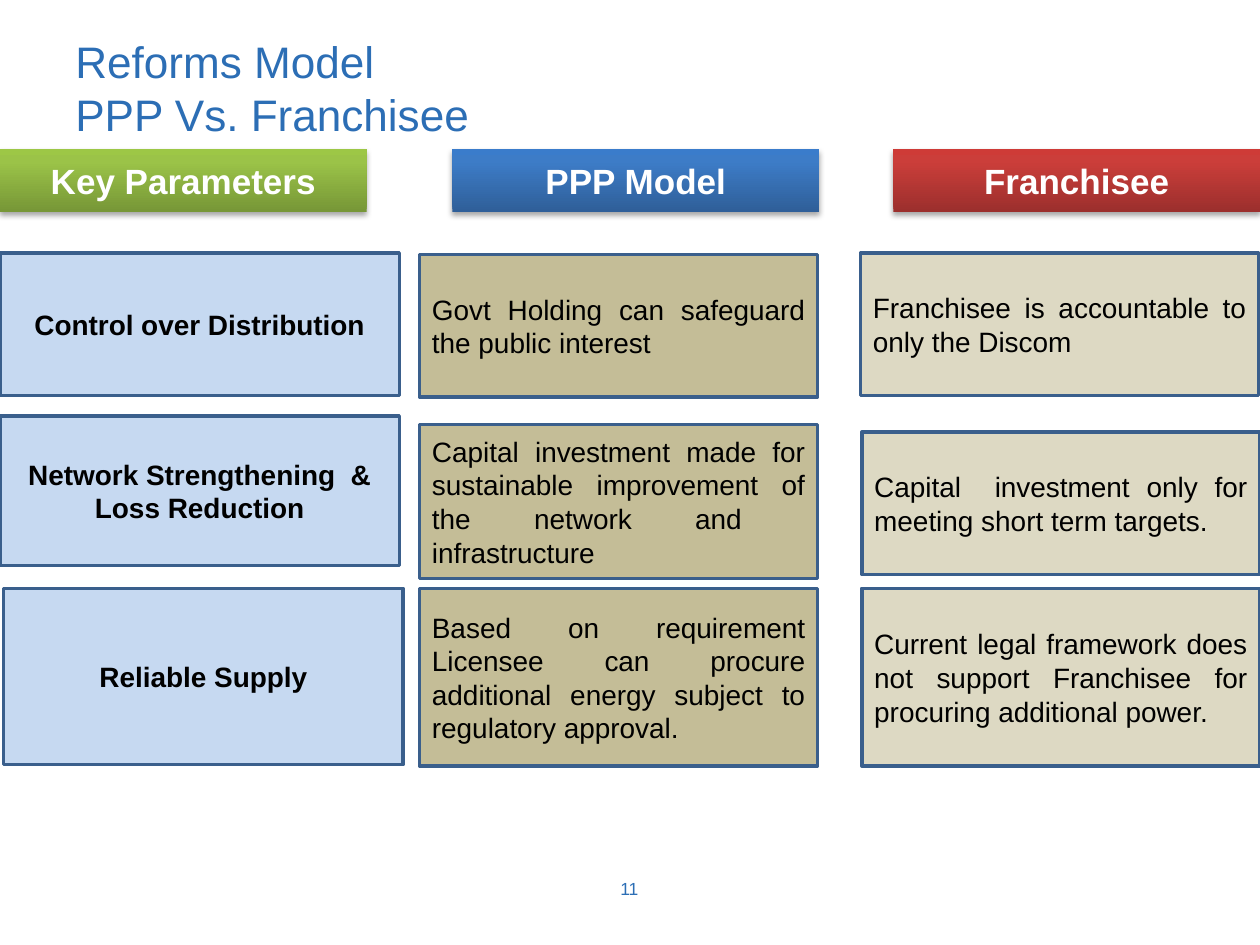
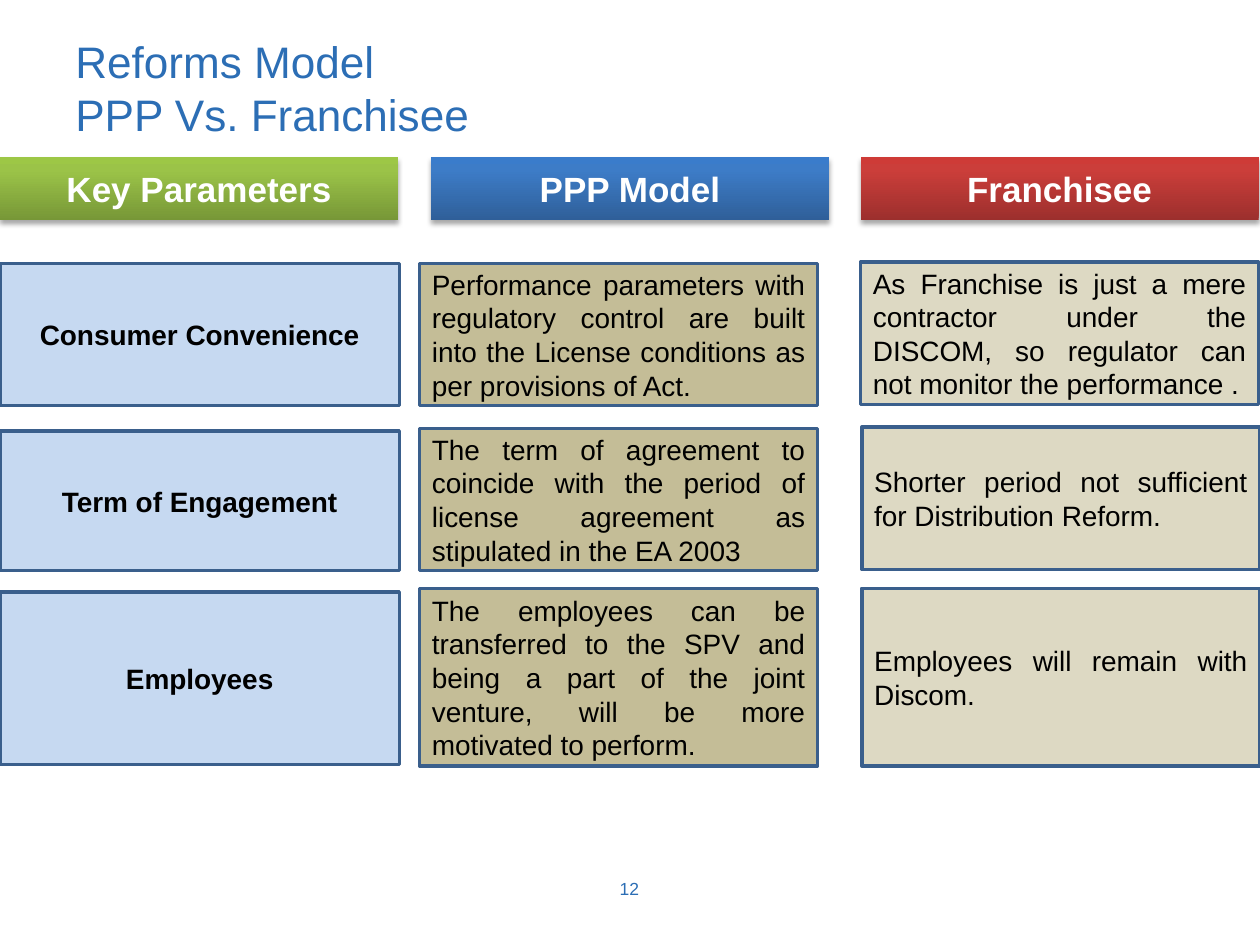
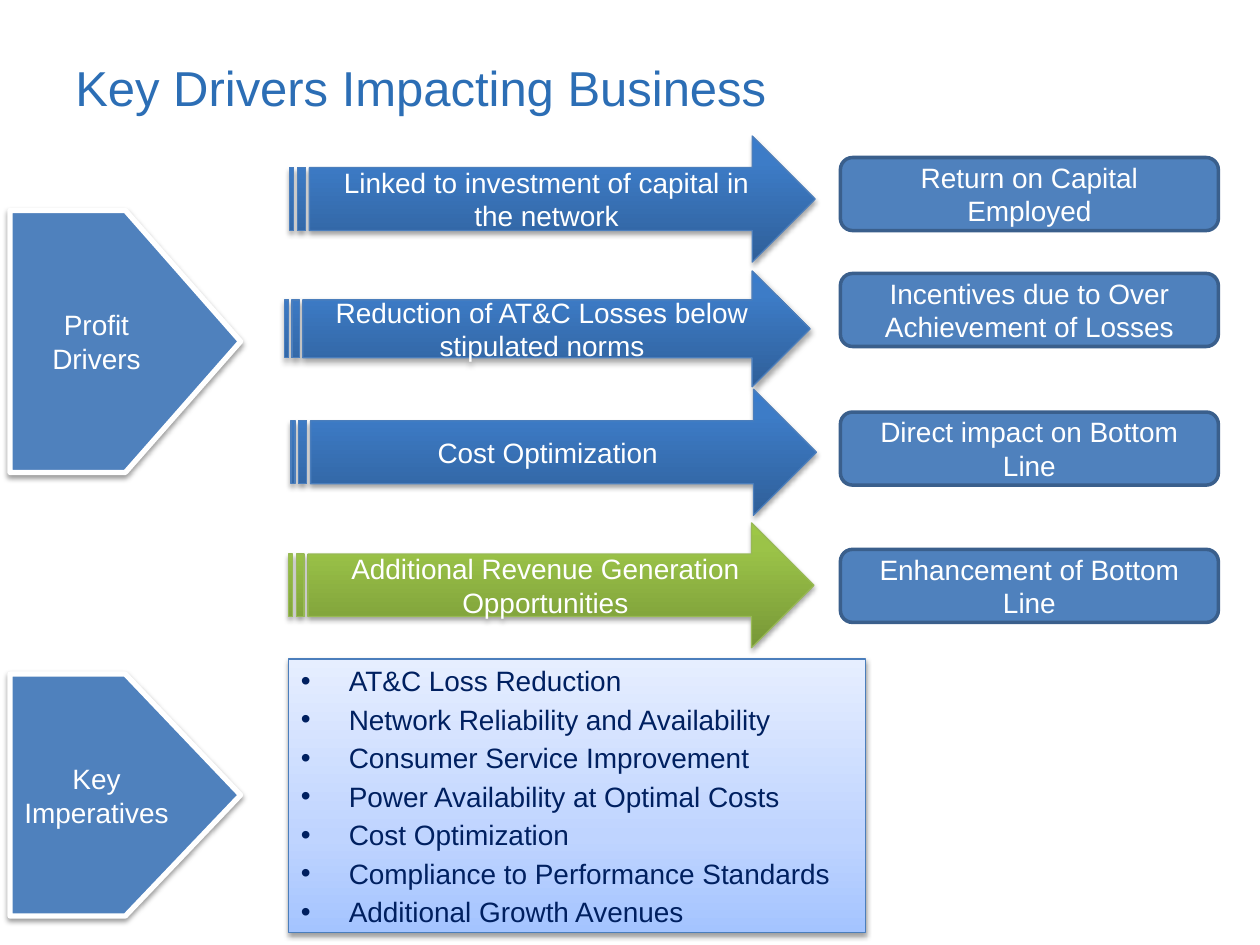
from lxml import etree
from pptx import Presentation
from pptx.dml.color import RGBColor
from pptx.enum.shapes import MSO_SHAPE
from pptx.enum.text import MSO_ANCHOR, PP_ALIGN
from pptx.oxml.ns import qn
from pptx.util import Pt

RECT = MSO_SHAPE.RECTANGLE
PLATE = MSO_SHAPE.PENTAGON
ARROW = MSO_SHAPE.STRIPED_RIGHT_ARROW
ROUND = MSO_SHAPE.FLOWCHART_ALTERNATE_PROCESS
LEFT, CENTER, JUST = PP_ALIGN.LEFT, PP_ALIGN.CENTER, PP_ALIGN.JUSTIFY
TOP, MIDDLE = MSO_ANCHOR.TOP, MSO_ANCHOR.MIDDLE

SCALE = 9144  # EMU per px, 100 px to the inch
FONT = "Arial"
HEX = {
    "title": "2C6EB5", "white": "FFFFFF", "black": "000000", "navy": "002060",
    "edge": "3A5F8C", "steel": "4F81BD", "sky": "C6D9F1", "tan": "C4BD97",
    "sand": "DDD9C3", "blue_edge": "4B7EBC", "green_edge": "98B955",
}
GRADS = {
    "blue": [(0, "2F5F99"), (80, "3D7CC7"), (100, "3A7CCB")],
    "red": [(0, "9C2F2D"), (80, "CB3E3A"), (100, "CE3B37")],
    "green": [(0, "779737"), (80, "9BC348"), (100, "9DC746")],
    "pale": [(0, "A4C4FF"), (35, "BFD4FF"), (100, "E6EEFF")],
}
HEADS = [("Key Parameters", "green"), ("PPP Model", "blue"), ("Franchisee", "red")]
COLS = [  # width, fill, alignment, bold
    (317, "sky", CENTER, True),
    (316, "tan", JUST, False),
    (316, "sand", JUST, False),
]


def px(*vals):
    return [round(v * SCALE) for v in vals]


def rgb(name):
    return RGBColor.from_string(HEX[name])


def add(parent, tag, **attrs):
    return etree.SubElement(parent, qn(tag), {k: str(v) for k, v in attrs.items()})


def write(para, text, size, color, align=CENTER, bold=False):
    para.text = text
    para.alignment = align
    look = {"name": FONT, "size": Pt(size), "bold": bold}
    for run in para.runs:
        for key, val in look.items():
            setattr(run.font, key, val)
        run.font.color.rgb = rgb(color)


def frame(shape, anchor=MIDDLE):
    body = shape.text_frame
    body.word_wrap = True
    body.vertical_anchor = anchor
    return body


def label(slide, box, text, size, align):
    shape = slide.shapes.add_textbox(*px(*box))
    write(frame(shape).paragraphs[0], text, size, "title", align)


def blend(shape, stops):
    """Fill the shape with a gradient that runs from bottom to top."""
    shape.fill.gradient()
    grad = shape.element.spPr.find(qn("a:gradFill"))
    grad.find(qn("a:lin")).set("ang", "16200000")
    items = grad.find(qn("a:gsLst"))
    items.clear()
    for pos, color in stops:
        add(add(items, "a:gs", pos=pos * 1000), "a:srgbClr", val=color)


def shade(shape, alpha, dist):
    """Cast a soft shadow straight down."""
    holder = shape.element.spPr.find(qn("a:effectLst"))
    cast = add(holder, "a:outerShdw", blurRad=Pt(3.1), dist=Pt(dist),
               dir=5400000, rotWithShape=0)
    color = add(cast, "a:srgbClr", val=HEX["black"])
    add(color, "a:alpha", val=alpha * 1000)


def block(slide, kind, box, fill, line=None, shadow=None):
    shape = slide.shapes.add_shape(kind, *px(*box))
    if fill in GRADS:
        blend(shape, GRADS[fill])
    else:
        shape.fill.solid()
        shape.fill.fore_color.rgb = rgb(fill)
    if line:
        shape.line.color.rgb = rgb(line[0])
        shape.line.width = Pt(line[1])
    else:
        shape.line.fill.background()
    shape.shadow.inherit = False
    if shadow:
        shade(shape, *shadow)
    return shape


def say(shape, text, size=16, color="white", align=CENTER, bold=False):
    write(frame(shape).paragraphs[0], text, size, color, align, bold)


def start(deck, title, size, page=None):
    """Add a slide with its title and, if given, its page number."""
    slide = deck.slides.add_slide(deck.slide_layouts[6])
    label(slide, (50, 30, 900, 78), title, size, LEFT)
    if page:
        label(slide, (383, 685, 233, 40), page, 10, CENTER)
    return slide


def compare(deck, page, heads, width, rows):
    """Slide of three columns; each cell is text, left, top, height."""
    slide = start(deck, "Reforms Model\nPPP Vs. Franchisee", 25.2, page)
    for (text, fill), (left, top) in zip(HEADS, heads):
        bar = block(slide, RECT, (left, top, width, 50), fill, shadow=(35, 1.8))
        say(bar, text, 20, bold=True)
    for row in rows:
        for (wide, fill, align, bold), (text, left, top, high) in zip(COLS, row):
            cell = block(slide, RECT, (left, top, wide, high), fill, ("edge", 2))
            say(cell, text, 16, "black", align, bold)


def plate(slide, box, text):
    say(block(slide, PLATE, box, "steel", ("white", 3), (38, 1.6)), text)


def arrow(slide, box, text, fill):
    edge = (f"{fill}_edge", 0.75)
    say(block(slide, ARROW, box, fill, edge, (35, 1.8)), text)


def bullets(slide, box, items):
    shape = block(slide, RECT, box, "pale", ("blue_edge", 0.75), (38, 1.6))
    body = frame(shape, TOP)
    body.margin_top, body.margin_bottom, indent = px(4, 0, 38)
    for num, text in enumerate(items):
        para = body.add_paragraph() if num else body.paragraphs[0]
        props = para._p.get_or_add_pPr()
        props.set("marL", str(indent))
        props.set("indent", str(-indent))
        add(props, "a:buFont", typeface=FONT)
        add(props, "a:buChar", char="•")
        if num:
            para.space_before = Pt(2.8)
        write(para, text, 16, "navy", JUST)


def drivers(deck):
    slide = start(deck, "Key Drivers Impacting Business", 28)
    plate(slide, (8, 167, 183, 208), "Profit Drivers")
    plate(slide, (8, 535, 183, 192), "Key Imperatives")
    bullets(slide, (229, 523, 458, 217), [
        "AT&C Loss Reduction",
        "Network Reliability and Availability",
        "Consumer Service Improvement",
        "Power Availability at Optimal Costs",
        "Cost Optimization",
        "Compliance to Performance Standards",
        "Additional Growth Avenues",
    ])
    lanes = [  # arrow left, top, height, fill, text; result top, text
        (230, 108, 100, "blue", "Linked to investment of capital in the network",
         125, "Return on Capital Employed"),
        (226, 215, 92, "blue", "Reduction of AT&C Losses below stipulated norms",
         217, "Incentives due to Over Achievement of Losses"),
        (231, 309, 100, "blue", "Cost Optimization",
         327, "Direct impact on Bottom Line"),
        (229, 415, 99, "green", "Additional Revenue Generation Opportunities",
         436, "Enhancement of Bottom Line"),
    ]
    for left, top, high, fill, cause, level, result in lanes:
        arrow(slide, (left, top, 417, high), cause, fill)
        say(block(slide, ROUND, (667, level, 300, 58), "steel", ("edge", 2)), result)


def main():
    deck = Presentation()
    deck.slide_width, deck.slide_height = px(1000, 750)
    compare(deck, "11", [(0, 118), (359, 118), (709, 118)], 291, [
        [("Control over Distribution", 0, 201, 113),
         ("Govt Holding can safeguard the public interest", 333, 202, 113),
         ("Franchisee is accountable to only the Discom", 683, 201, 113)],
        [("Network Strengthening  & Loss Reduction", 0, 330, 119),
         ("Capital investment made for sustainable improvement of the "
          "network and  infrastructure", 333, 337, 122),
         ("Capital  investment only for meeting short term targets.",
          684, 343, 113)],
        [("Reliable Supply", 3, 467, 140),
         ("Based on requirement Licensee can procure additional energy "
          "subject to regulatory approval.", 333, 467, 141),
         ("Current legal framework does not support Franchisee for "
          "procuring additional power.", 684, 467, 141)],
    ])
    compare(deck, "12", [(0, 125), (342, 125), (683, 125)], 316, [
        [("Consumer Convenience", 0, 209, 113),
         ("Performance parameters with regulatory control are built into "
          "the License conditions as per provisions of Act.", 333, 209, 113),
         ("As Franchise is just a mere contractor under the DISCOM, so "
          "regulator can not monitor the performance .", 683, 208, 113)],
        [("Term of Engagement", 0, 342, 111),
         ("The term of agreement to coincide with the period of license "
          "agreement as stipulated in the EA 2003", 333, 340, 113),
         ("Shorter period not sufficient for Distribution Reform.",
          684, 339, 113)],
        [("Employees", 0, 470, 137),
         ("The employees can be transferred to the SPV and being a part of "
          "the joint venture, will be more motivated to perform.",
          333, 467, 141),
         ("Employees will remain with Discom.", 684, 467, 141)],
    ])
    drivers(deck)
    deck.save("out.pptx")


if __name__ == "__main__":
    main()
